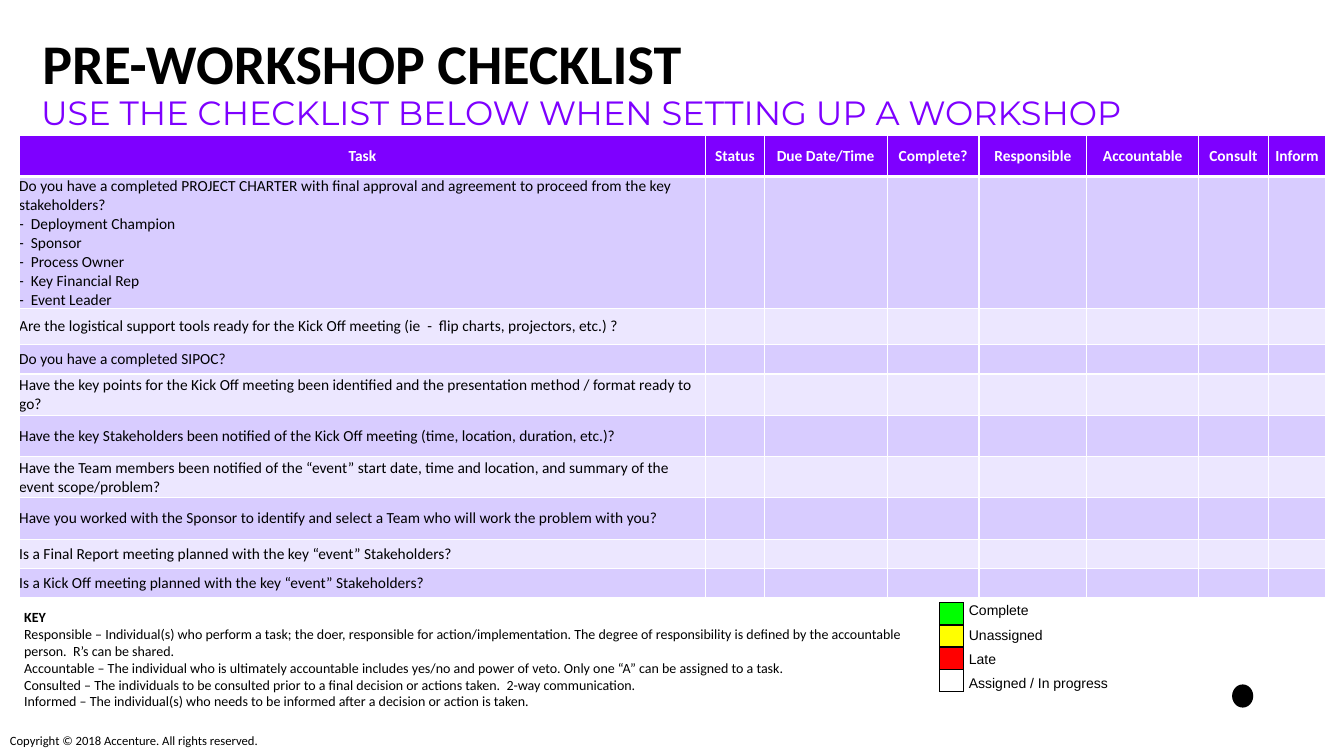
from lxml.etree import SubElement
from pptx import Presentation
from pptx.dml.color import RGBColor
from pptx.enum.shapes import MSO_SHAPE as Shape
from pptx.enum.text import MSO_ANCHOR as Anchor, PP_ALIGN as Align
from pptx.oxml.ns import qn
from pptx.util import Inches, Pt

COLORS = {
    "black": "000000", "white": "FFFFFF", "purple": "7E00FF",
    "band_dark": "D8CCFF", "band_light": "ECE7FF",
    "green": "00FF00", "yellow": "FFFF00", "red": "FF0000",
}
NO_STYLE = "{2D5ABB26-0587-4C30-8999-92F81FD0307C}"

COLUMNS = [("Task", 6.81), ("Status", 0.58), ("Due Date/Time", 1.22),
           ("Complete?", 0.91), ("Responsible", 1.07), ("Accountable", 1.11),
           ("Consult", 0.69), ("Inform", 0.57)]
HEADER_HEIGHT = 0.41
TASKS = [
    ("Do you have a completed PROJECT CHARTER with final approval and agreement "
     "to proceed from the key stakeholders?\n-  Deployment Champion\n-  Sponsor\n"
     "-  Process Owner\n-  Key Financial Rep\n-  Event Leader", 1.31),
    ("Are the logistical support tools ready for the Kick Off meeting "
     "(ie  -  flip charts, projectors, etc.) ?", 0.36),
    ("Do you have a completed SIPOC?", 0.29),
    ("Have the key points for the Kick Off meeting been identified and the "
     "presentation method / format ready to go?", 0.41),
    ("Have the key Stakeholders been notified of the Kick Off meeting "
     "(time, location, duration, etc.)?", 0.41),
    ("Have the Team members been notified of the “event” start date, time and "
     "location, and summary of the event scope/problem?", 0.41),
    ("Have you worked with the Sponsor to identify and select a Team who will "
     "work the problem with you?", 0.41),
    ("Is a Final Report meeting planned with the key “event” Stakeholders?", 0.29),
    ("Is a Kick Off meeting planned with the key “event” Stakeholders?", 0.29),
]
ROLE_KEY = "\n".join([
    "KEY",
    "Responsible – Individual(s) who perform a task; the doer, responsible for "
    "action/implementation. The degree of responsibility is defined by the "
    "accountable person.  R’s can be shared.",
    "Accountable – The individual who is ultimately accountable includes yes/no "
    "and power of veto. Only one “A” can be assigned to a task.",
    "Consulted – The individuals to be consulted prior to a final decision or "
    "actions taken.  2-way communication.",
    "Informed – The individual(s) who needs to be informed after a decision or "
    "action is taken.",
])
STATUSES = [("Complete", "green"), ("Unassigned", "yellow"), ("Late", "red"),
            ("Assigned / In progress", None)]


def rgb(name):
    return RGBColor.from_string(COLORS[name])


def format_runs(paragraphs, size, font="Calibri", color="black", bold=False):
    for paragraph in paragraphs:
        for run in paragraph.runs:
            run.font.size = Pt(size)
            run.font.name = font
            run.font.bold = bold
            run.font.color.rgb = rgb(color)


def add_text(slide, box, text, size, insets=(0.1, 0.05, 0.1, 0.05), **style):
    frame = slide.shapes.add_textbox(*map(Inches, box)).text_frame
    frame.word_wrap = True
    (frame.margin_left, frame.margin_top,
     frame.margin_right, frame.margin_bottom) = map(Inches, insets)
    frame.text = text
    format_runs(frame.paragraphs, size, **style)
    return frame.paragraphs


def add_plain_table(slide, left, top, widths, heights):
    """Add a table without a style, sized by its columns and rows."""
    box = map(Inches, (left, top, sum(widths), sum(heights)))
    graphic = slide.shapes.add_table(len(heights), len(widths), *box)
    table = graphic.table
    graphic._element.find(".//" + qn("a:tableStyleId")).text = NO_STYLE
    table.first_row = table.horz_banding = False
    for column, width in zip(table.columns, widths):
        column.width = Inches(width)
    for row, height in zip(table.rows, heights):
        row.height = Inches(height)
    return table


def fill_cell(cell, text="", size=10, fill=None, anchor=Anchor.MIDDLE, **style):
    cell.margin_left = cell.margin_top = cell.margin_right = cell.margin_bottom = 0
    cell.vertical_anchor = anchor
    if text:
        cell.text_frame.text = text
        format_runs(cell.text_frame.paragraphs, size, **style)
    else:
        end = SubElement(cell.text_frame.paragraphs[0]._p, qn("a:endParaRPr"))
        end.set("sz", str(size * 100))
    if fill:
        cell.fill.solid()
        cell.fill.fore_color.rgb = rgb(fill)
    else:
        cell.fill.background()


def border_cell(cell, color, bottom=1, top=1):
    properties = cell._tc.get_or_add_tcPr()
    sides = [("a:lnL", 1), ("a:lnR", 1), ("a:lnT", top), ("a:lnB", bottom)]
    for position, (side, width) in enumerate(sides):
        line = properties.makeelement(qn(side), {"w": str(Pt(width))})
        solid = SubElement(line, qn("a:solidFill"))
        SubElement(solid, qn("a:srgbClr")).set("val", COLORS[color])
        properties.insert(position, line)


def add_heading(slide, left, top, width):
    title = add_text(slide, (left + 0.17, top, width, 1.42),
                     "PRE-WORKSHOP CHECKLIST", 40, (0, 0.05, 0, 0), bold=True)[0]
    title.line_spacing = 0.7
    subtitle = add_text(slide, (left, top + 0.5, width, 1.19),
                        "USE THE CHECKLIST BELOW WHEN SETTING UP A WORKSHOP", 24,
                        font="Montserrat", color="purple")[0]
    subtitle.line_spacing = 0.85
    subtitle.space_after = Pt(12)
    indent = subtitle._p.get_or_add_pPr()
    indent.set("marL", str(Inches(0.06)))
    indent.set("indent", "0")


def add_checklist(slide, left, top):
    widths = [width for _, width in COLUMNS]
    heights = [HEADER_HEIGHT] + [height for _, height in TASKS]
    table = add_plain_table(slide, left, top, widths, heights)
    table.first_row = True
    for column, (heading, _) in enumerate(COLUMNS):
        cell = table.cell(0, column)
        fill_cell(cell, heading, 11, "purple", color="white", bold=True)
        cell.text_frame.paragraphs[0].alignment = Align.CENTER
        border_cell(cell, "white", bottom=3)
    for row, (task, _) in enumerate(TASKS, 1):
        band = "band_dark" if row % 2 else "band_light"
        for column in range(len(COLUMNS)):
            cell = table.cell(row, column)
            fill_cell(cell, "" if column else task, 11, band)
            border_cell(cell, "white", top=3 if row == 1 else 1)


def add_role_key(slide, box):
    paragraphs = add_text(slide, box, ROLE_KEY, 10, (0, 0, 0, 0.05))
    paragraphs[0].runs[0].font.bold = True


def add_status_legend(slide, left, top):
    count = len(STATUSES)
    swatches = add_plain_table(slide, left, top + 0.08, [0.24], [0.22] * count)
    labels = add_plain_table(slide, left + 0.29, top, [2.06, 0.32], [0.24] * count)
    for row, (status, color) in enumerate(STATUSES):
        fill_cell(swatches.cell(row, 0), fill=color)
        border_cell(swatches.cell(row, 0), "black")
        fill_cell(labels.cell(row, 0), status, font="Arial", anchor=Anchor.BOTTOM)
        fill_cell(labels.cell(row, 1))
    labels.cell(count - 1, 0).merge(labels.cell(count - 1, 1))


def add_footer(slide, left, top):
    mark = slide.shapes.add_shape(
        Shape.OVAL, *map(Inches, (left + 12.22, top - 0.43, 0.21, 0.23)))
    mark.shadow.inherit = False
    mark.fill.solid()
    mark.fill.fore_color.rgb = rgb("black")
    mark.line.fill.background()
    add_text(slide, (left, top, 4.5, 0.15),
             "Copyright © 2018 Accenture. All rights reserved.", 9)


def main():
    deck = Presentation()
    deck.slide_width, deck.slide_height = Inches(13.33), Inches(7.5)
    slide = deck.slides.add_slide(deck.slide_layouts[6])
    add_heading(slide, 0.25, 0.42, 12.5)
    add_checklist(slide, 0.19, 1.34)
    add_role_key(slide, (0.24, 6.04, 9.06, 1.06))
    add_status_legend(slide, 9.32, 5.9)
    add_footer(slide, 0, 7.22)
    deck.save("out.pptx")


if __name__ == "__main__":
    main()
